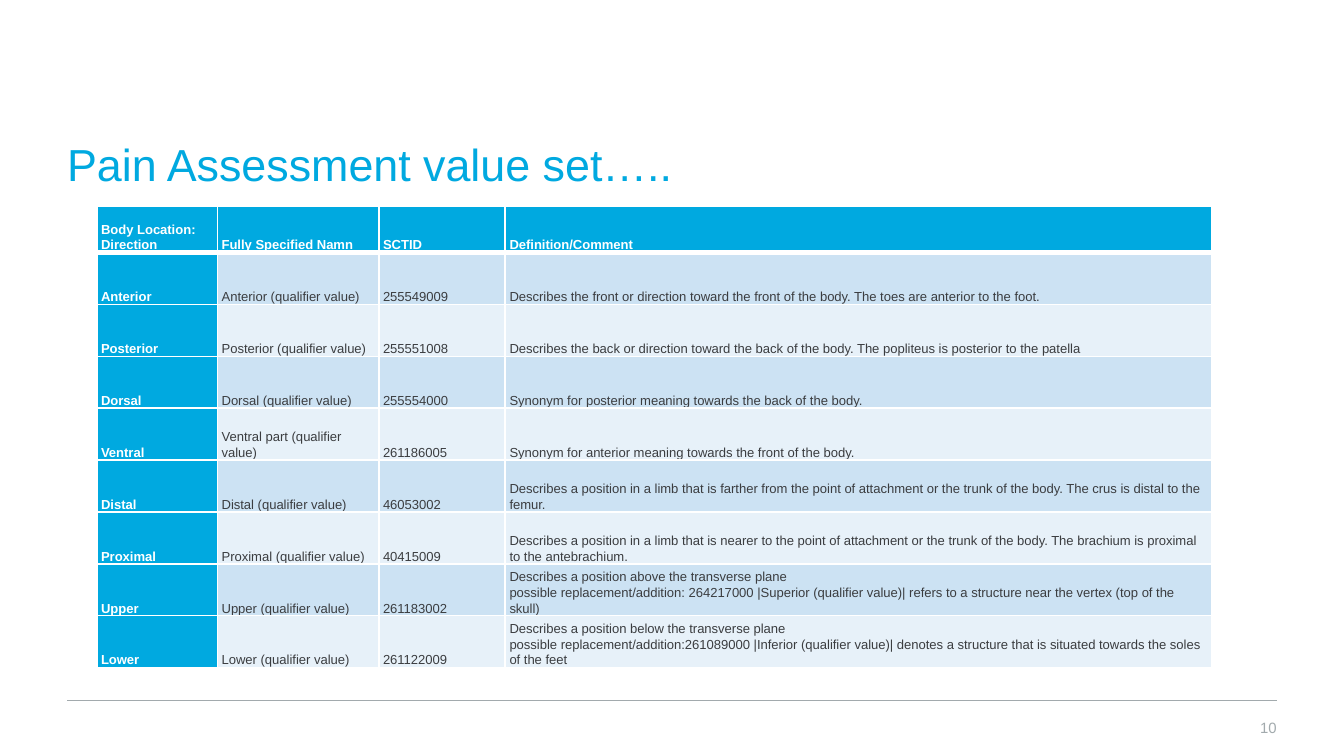
from lxml.etree import SubElement
from pptx import Presentation
from pptx.dml.color import RGBColor as RGB
from pptx.enum.shapes import MSO_CONNECTOR as LINE
from pptx.enum.text import MSO_ANCHOR as ANCHOR, PP_ALIGN as ALIGN
from pptx.oxml.ns import qn
from pptx.util import Cm, Pt

BLUE = RGB(0x00, 0xA9, 0xE0)
GREY = RGB(0xA2, 0xAA, 0xAD)
DARK = RGB(0x3B, 0x3D, 0x40)
WHITE = RGB(0xFF, 0xFF, 0xFF)
BANDS = [RGB(0xCC, 0xE2, 0xF3), RGB(0xE7, 0xF1, 0xF9)]

HEAD = ["Body Location: Direction", "Fully Specified Namn", "SCTID",
        "Definition/Comment"]
TERMS = [
    ("Anterior", "255549009",
     "Describes the front or direction toward the front of the body. "
     "The toes are anterior to the foot."),
    ("Posterior", "255551008",
     "Describes the back or direction toward the back of the body. "
     "The popliteus is posterior to the patella"),
    ("Dorsal", "255554000",
     "Synonym for posterior meaning towards the back of the body."),
    ("Ventral", "261186005",
     "Synonym for anterior meaning towards the front of the body."),
    ("Distal", "46053002",
     "Describes a position in a limb that is farther from the point of "
     "attachment or the trunk of the body. The crus is distal to the femur."),
    ("Proximal", "40415009",
     "Describes a position in a limb that is nearer to the point of "
     "attachment or the trunk of the body. "
     "The brachium is proximal to the antebrachium."),
    ("Upper", "261183002",
     "Describes a position above the transverse plane\n"
     "possible replacement/addition: 264217000 |Superior (qualifier value)| "
     "refers to a structure near the vertex (top of the skull)"),
    ("Lower", "261122009",
     "Describes a position below the transverse plane\n"
     "possible replacement/addition:261089000 |Inferior (qualifier value)| "
     "denotes a structure that is situated towards the soles of the feet"),
]
WIDTHS = [2.28, 3.05, 2.39, 13.36]
HEAD_H, ROW_H = 0.88, 0.98


def add_text(slide, text, box, size, color, align):
    shape = slide.shapes.add_textbox(*[Cm(n) for n in box])
    frame = shape.text_frame
    frame.word_wrap = True
    frame.vertical_anchor = ANCHOR.MIDDLE
    frame.margin_left = frame.margin_right = 0
    frame.margin_top = frame.margin_bottom = 0
    frame.text = text
    para = frame.paragraphs[0]
    para.alignment = align
    para.font.name, para.font.size = "Arial", Pt(size)
    para.font.color.rgb = color


def add_edges(cell, top, bottom):
    """Draw white cell borders; top and bottom are widths in points."""
    props = cell._tc.get_or_add_tcPr()
    for tag, width in ("lnL", 1), ("lnR", 1), ("lnT", top), ("lnB", bottom):
        edge = SubElement(props, qn("a:" + tag), w=str(Pt(width)))
        fill = SubElement(edge, qn("a:solidFill"))
        SubElement(fill, qn("a:srgbClr"), val=str(WHITE))


prs = Presentation()
prs.slide_width, prs.slide_height = Cm(25.4), Cm(14.28)
slide = prs.slides.add_slide(prs.slide_layouts[6])

rule = slide.shapes.add_connector(LINE.STRAIGHT, Cm(24.13), Cm(13.23),
                                  Cm(1.27), Cm(13.23))
rule.line.color.rgb = GREY
rule.line.width = Pt(0.75)
SubElement(rule._element.spPr, qn("a:effectLst"))

add_text(slide, "Pain Assessment value set…..", (1.27, 2.31, 22.86, 1.57),
         24, BLUE, ALIGN.LEFT)
add_text(slide, "10", (22.91, 13.23, 1.22, 1.04), 8, GREY, ALIGN.RIGHT)

rows = [HEAD]
for name, code, note in TERMS:
    part = " part" if name == "Ventral" else ""
    rows.append([name, f"{name}{part} (qualifier value)", code, note])

table = slide.shapes.add_table(
    len(rows), len(WIDTHS), Cm(1.83), Cm(3.89), Cm(sum(WIDTHS)),
    Cm(HEAD_H + ROW_H * len(TERMS))).table
for col, width in zip(table.columns, WIDTHS):
    col.width = Cm(width)

for r, row in enumerate(rows):
    table.rows[r].height = Cm(ROW_H if r else HEAD_H)
    for c, text in enumerate(row):
        cell = table.cell(r, c)
        strong = r == 0 or c == 0
        add_edges(cell, 3 if r == 1 else 1, 3 if r == 0 else 1)
        cell.fill.solid()
        cell.fill.fore_color.rgb = BLUE if strong else BANDS[(r - 1) % 2]
        cell.vertical_anchor = ANCHOR.BOTTOM
        cell.margin_left = cell.margin_right = Cm(0.08)
        cell.margin_top = cell.margin_bottom = 0
        cell.text = text
        for para in cell.text_frame.paragraphs:
            para.line_spacing = 1.07
            para.font.name, para.font.size = "Arial", Pt(7)
            para.font.bold = strong
            para.font.color.rgb = WHITE if strong else DARK

prs.save("out.pptx")
